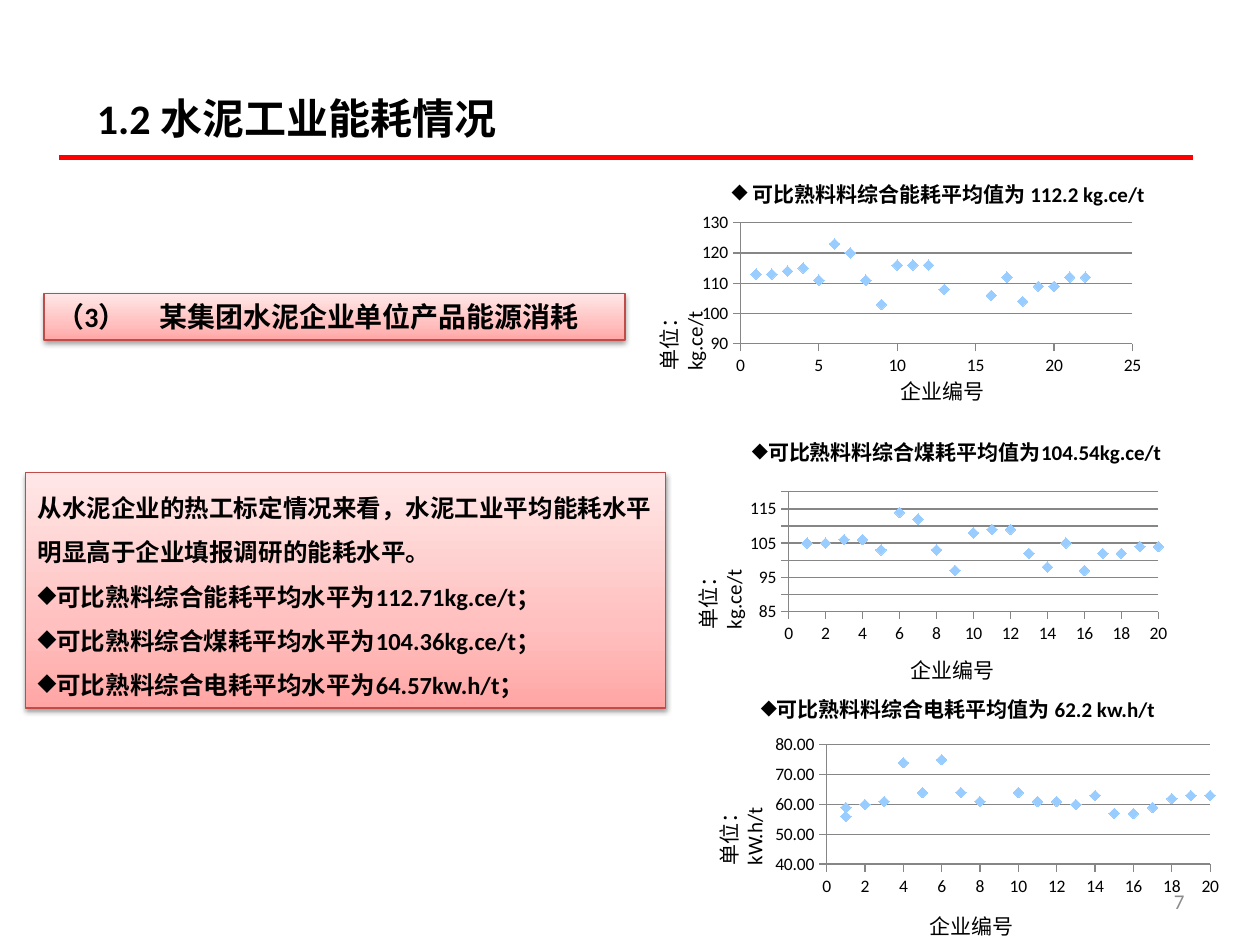
from copy import deepcopy
from dataclasses import dataclass

from lxml import etree
from pptx import Presentation
from pptx import util as u
from pptx.chart import data
from pptx.dml import color
from pptx.enum import chart as ch
from pptx.enum import shapes, text
from pptx.oxml import ns


@dataclass(frozen=True)
class Theme:
    font: str = "Calibri"
    ink: str = "000000"
    muted: str = "8C8C8C"
    rule: str = "FF0000"
    box_line: str = "BF4C48"
    box_stops: tuple = ((0, "FFA6A5"), (0.35, "FFC0BF"), (1, "FFE7E7"))
    axis: str = "868686"
    marker: str = "99CCFF"
    title: int = 24
    topic: int = 16
    body: int = 14
    label: int = 12
    tick: int = 10


@dataclass(frozen=True)
class Panel:
    """One chart with its heading and hand-placed axis labels."""
    heading: str
    heading_at: tuple
    unit: str
    unit_at: tuple
    company_at: tuple
    chart_at: tuple
    plot: tuple
    x_axis: tuple  # min, max, step
    y_axis: tuple
    number_format: str
    points: list


def rgb(value):
    return color.RGBColor.from_string(value)


def add_node(parent, tag, **attrs):
    node = etree.SubElement(parent, ns.qn(tag))
    for key, value in attrs.items():
        node.set(key, str(value))
    return node


class SlideBuilder:
    def __init__(self, slide, theme):
        self.slide, self.theme = slide, theme

    def place(self, shape, box):
        shape.left, shape.top, shape.width, shape.height = map(u.Pt, box)

    def add_text(self, frame, paragraphs, size, bold=False, ink=None, bullets=(),
                 align=text.PP_ALIGN.LEFT, spacing=None):
        for i, wording in enumerate(paragraphs):
            para = frame.paragraphs[0] if i == 0 else frame.add_paragraph()
            para.alignment = align
            if spacing:
                para.line_spacing = spacing
            if i in bullets:
                add_node(para._p.get_or_add_pPr(), "a:buChar", char="◆")
            run = para.add_run()
            run.text = wording
            run.font.name, run.font.size, run.font.bold = self.theme.font, u.Pt(size), bold
            run.font.color.rgb = rgb(ink or self.theme.ink)

    def title(self, wording, box):
        holder = self.slide.shapes.title
        self.place(holder, box)
        holder.text_frame.vertical_anchor = text.MSO_ANCHOR.TOP
        holder.text_frame.auto_size = text.MSO_AUTO_SIZE.SHAPE_TO_FIT_TEXT
        self.add_text(holder.text_frame, [wording], self.theme.title, bold=True)

    def label(self, wording, box, wrap=True, **style):
        shape = self.slide.shapes.add_textbox(*map(u.Pt, box))
        shape.text_frame.word_wrap = wrap
        self.add_text(shape.text_frame, [wording], self.theme.label, **style)
        return shape

    def unit_label(self, wording, box):
        shape = self.label(wording, box)
        shape.rotation = 270
        shape.text_frame.margin_right = u.Pt(36)  # breaks before the unit

    def rule(self, x1, x2, y):
        line = self.slide.shapes.add_connector(
            shapes.MSO_CONNECTOR.STRAIGHT, u.Pt(x1), u.Pt(y), u.Pt(x2), u.Pt(y))
        line.line.color.rgb, line.line.width = rgb(self.theme.rule), u.Pt(2.5)
        add_node(line._element.spPr, "a:effectLst")

    def pink_box(self, paragraphs, box, size, **style):
        shape = self.slide.shapes.add_shape(shapes.MSO_SHAPE.RECTANGLE, *map(u.Pt, box))
        shape.line.color.rgb, shape.line.width = rgb(self.theme.box_line), u.Pt(0.75)
        # Three-stop gradient, running upwards
        shape.fill.gradient()
        shape.fill.gradient_angle = 90
        stop_list = shape._element.spPr.find(".//" + ns.qn("a:gsLst"))
        stop_list.append(deepcopy(stop_list[0]))
        for stop, (position, tone) in zip(shape.fill.gradient_stops, self.theme.box_stops):
            stop.position, stop.color.rgb = position, rgb(tone)
        # Soft shadow below
        shape.shadow.inherit = False
        effects = shape._element.spPr.find(ns.qn("a:effectLst"))
        shadow = add_node(effects, "a:outerShdw", blurRad=u.Pt(3.1), dist=u.Pt(1.6),
                          dir=5400000, rotWithShape=0)
        add_node(add_node(shadow, "a:srgbClr", val=self.theme.ink), "a:alpha", val=38000)
        frame = shape.text_frame
        frame.word_wrap = True
        frame.vertical_anchor = text.MSO_ANCHOR.TOP
        frame.auto_size = text.MSO_AUTO_SIZE.SHAPE_TO_FIT_TEXT
        self.add_text(frame, paragraphs, size, bold=True, **style)
        return shape

    def scatter(self, panel):
        chart_data = data.XyChartData()
        series_data = chart_data.add_series("Series 1")
        for x, y in panel.points:
            series_data.add_data_point(x, y)
        chart = self.slide.shapes.add_chart(
            ch.XL_CHART_TYPE.XY_SCATTER, *map(u.Pt, panel.chart_at), chart_data).chart
        chart.has_legend = chart.has_title = False
        chart.font.name, chart.font.size = self.theme.font, u.Pt(self.theme.tick)
        chart.font.color.rgb = rgb(self.theme.ink)
        chart.plots[0].vary_by_categories = False
        # Diamond markers without a line
        series = chart.plots[0].series[0]
        series.smooth = False
        series.format.line.fill.background()
        series.marker.style, series.marker.size = ch.XL_MARKER_STYLE.DIAMOND, 6
        series.marker.format.fill.solid()
        series.marker.format.fill.fore_color.rgb = rgb(self.theme.marker)
        series.marker.format.line.fill.background()
        # Axes
        for axis, scale, number_format in (
                (chart.category_axis, panel.x_axis, "General"),
                (chart.value_axis, panel.y_axis, panel.number_format)):
            axis.minimum_scale, axis.maximum_scale, axis.major_unit = scale
            axis.major_tick_mark = ch.XL_TICK_MARK.OUTSIDE
            axis.minor_tick_mark = ch.XL_TICK_MARK.NONE
            axis.format.line.color.rgb = rgb(self.theme.axis)
            axis.tick_labels.number_format = number_format
            axis.tick_labels.number_format_is_linked = False
        chart.category_axis.has_major_gridlines = False
        chart.value_axis.has_major_gridlines = True
        chart.value_axis.major_gridlines.format.line.color.rgb = rgb(self.theme.axis)
        # Inner plot area as fractions of the chart
        area = chart._chartSpace.find(".//" + ns.qn("c:plotArea"))
        for old in area.findall(ns.qn("c:layout")):
            area.remove(old)
        layout = add_node(area, "c:layout")
        area.insert(0, layout)
        manual = add_node(layout, "c:manualLayout")
        for tag, value in (("layoutTarget", "inner"), ("xMode", "edge"), ("yMode", "edge"),
                           *zip("xywh", panel.plot)):
            add_node(manual, "c:" + tag, val=value)

    def panel(self, panel):
        self.label(panel.heading, panel.heading_at, bold=True, bullets=(0,))
        self.unit_label(panel.unit, panel.unit_at)
        self.label("企业编号", panel.company_at, wrap=False)
        self.scatter(panel)


ENERGY = [113, 113, 114, 115, 111, 123, 120, 111, 103, 116, 116, 116, 108]
ENERGY_LATER = [106, 112, 104, 109, 109, 112, 112]  # companies 16 to 22
COAL = [105, 105, 106, 106, 103, 114, 112, 103, 97, 108,
        109, 109, 102, 98, 105, 97, 102, 102, 104, 104]
POWER_COMPANIES = [1, 15, 16, 1, 17, 13, 2, 3, 11, 12, 8, 18, 14, 19, 20, 5, 7, 10, 4, 6]
POWER = [56, 57, 57, 59, 59, 60, 60, 61, 61, 61, 61, 62, 63, 63, 63, 64, 64, 64, 74, 75]

PANELS = [
    Panel(" 可比熟料料综合能耗平均值为 112.2 kg.ce/t", (411, 100, 272, 21.6),
          "单位：kg.ce/t", (339.8, 165.6, 85, 21.6), (507.6, 213, 63.4, 21.6),
          (388, 116.6, 270, 106.6), (0.13, 0.1, 0.83, 0.65), (0, 25, 5), (90, 130, 10), "General",
          [*enumerate(ENERGY, 1), *enumerate(ENERGY_LATER, 16)]),
    Panel("可比熟料料综合煤耗平均值为104.54kg.ce/t", (422.6, 247.7, 258.5, 21.6),
          "单位：kg.ce/t", (362.2, 313.2, 85, 21.6), (513.4, 372.2, 63.4, 21.6),
          (411, 264.2, 264.2, 112.3), (0.15, 0.15, 0.8, 0.61), (0, 20, 2), (85, 120, 5), "General",
          [*enumerate(COAL, 1)]),
    Panel("可比熟料料综合电耗平均值为 62.2 kw.h/t", (427.7, 394.6, 258.5, 21.6),
          "单位：kW.h/t", (374.4, 448.6, 84.2, 21.6), (524.2, 518.4, 63.4, 21.6),
          (411, 411.8, 292.3, 106.6), (0.21, 0.13, 0.75, 0.64), (0, 20, 2), (40, 80, 10), "0.00",
          [*zip(POWER_COMPANIES, POWER)]),
]


def main():
    deck = Presentation()
    deck.slide_width, deck.slide_height = u.Pt(720), u.Pt(540)
    theme = Theme()
    builder = SlideBuilder(deck.slides.add_slide(deck.slide_layouts[5]), theme)

    # Header and page number
    builder.title("1.2 水泥工业能耗情况", (48.2, 49, 306, 36))
    builder.rule(33.8, 681.8, 90)
    page = builder.label("7", (516.2, 500.4, 167.8, 28.8), ink=theme.muted,
                         align=text.PP_ALIGN.RIGHT)
    page.text_frame.vertical_anchor = text.MSO_ANCHOR.MIDDLE

    # Topic and findings
    topic = builder.pink_box(["（3）\t某集团水泥企业单位产品能源消耗"],
                             (25.2, 167.8, 331.9, 26.6), theme.topic)
    tabs = add_node(topic.text_frame.paragraphs[0]._p.get_or_add_pPr(), "a:tabLst")
    add_node(tabs, "a:tab", pos=u.Pt(59), algn="l")
    builder.pink_box(["从水泥企业的热工标定情况来看，水泥工业平均能耗水平明显高于企业填报调研的能耗水平。",
                      "可比熟料综合能耗平均水平为112.71kg.ce/t；",
                      "可比熟料综合煤耗平均水平为104.36kg.ce/t；",
                      "可比熟料综合电耗平均水平为64.57kw.h/t；"],
                     (14.4, 270, 365.8, 134.6), theme.body, bullets=(1, 2, 3), spacing=1.5)

    # Charts
    for panel in PANELS:
        builder.panel(panel)
    deck.save("out.pptx")


if __name__ == "__main__":
    main()
